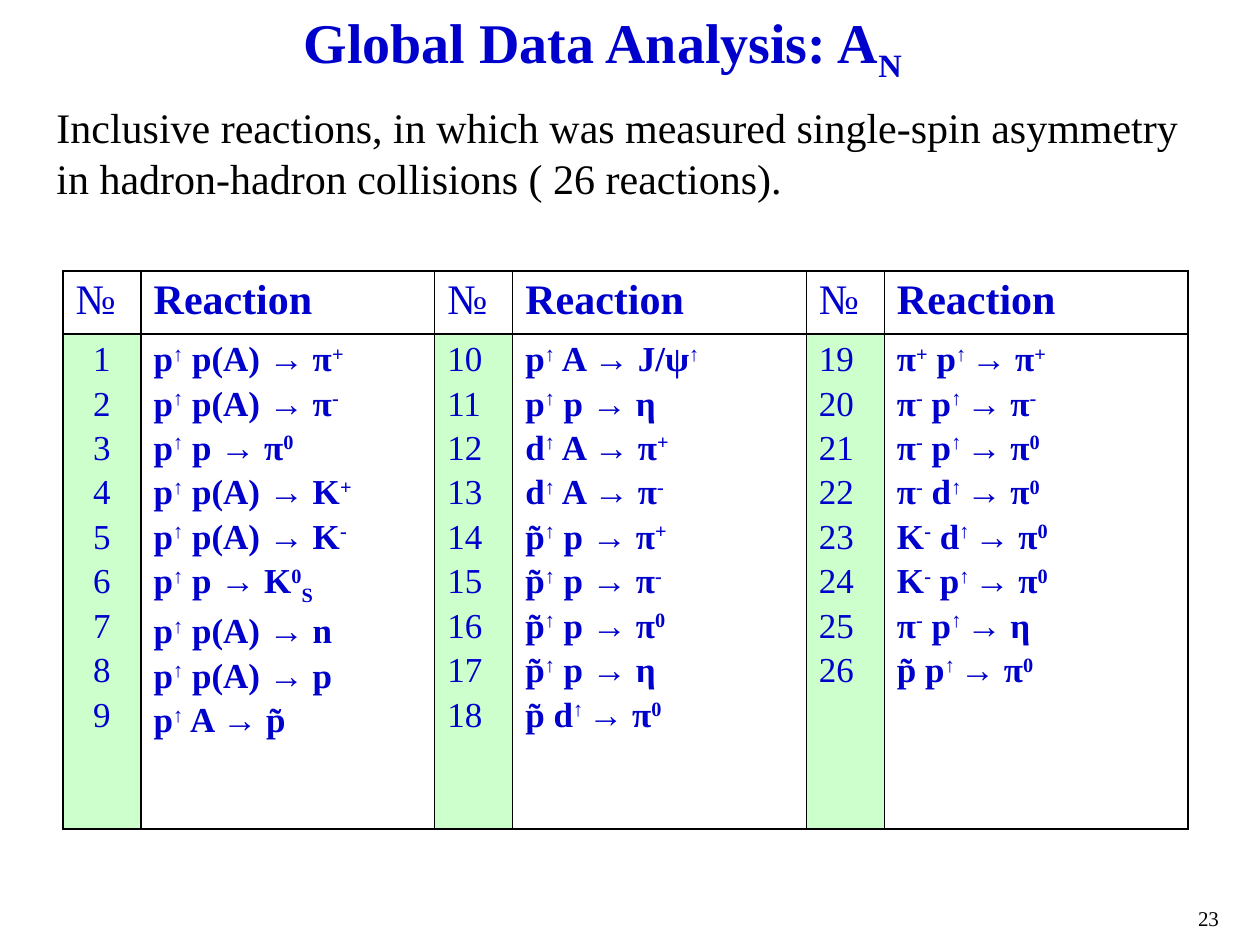
import itertools
from dataclasses import dataclass

import pptx
import pptx.dml.color
import pptx.enum.text
import pptx.oxml
import pptx.oxml.ns
import pptx.util

Pt = pptx.util.Pt
Inches = pptx.util.Inches
RGB = pptx.dml.color.RGBColor.from_string


@dataclass(frozen=True)
class Theme:
    font: str = "Times New Roman"
    blue: str = "0000CC"
    black: str = "000000"
    white: str = "FFFFFF"
    green: str = "CCFFCC"
    title: int = 32
    body: int = 24
    cell: int = 20
    number: int = 12


THEME = Theme()
BASELINES = {"^": "30000", "_": "-25000"}

# In reactions, ^ raises and _ lowers the one character that follows it
REACTIONS = [
    ["p^↑ p(A) → π^+", "p^↑ p(A) → π^-", "p^↑ p → π^0",
     "p^↑ p(A) → K^+", "p^↑ p(A) → K^-", "p^↑ p → K^0_S",
     "p^↑ p(A) → n", "p^↑ p(A) → p", "p^↑ A → p̃"],
    ["p^↑ A → J/ψ^↑", "p^↑ p → η", "d^↑ A → π^+",
     "d^↑ A → π^-", "p̃^↑ p → π^+", "p̃^↑ p → π^-",
     "p̃^↑ p → π^0", "p̃^↑ p → η", "p̃ d^↑^ → π^0"],
    ["π^+ p^↑^ → π^+", "π^- p^↑^ → π^-", "π^- p^↑^ → π^0",
     "π^- d^↑^ → π^0", "K^- d^↑^ → π^0", "K^- p^↑^ → π^0",
     "π^- p^↑^ → η", "p̃ p^↑^ → π^0"],
]


def share(prs, left, top, width, height):
    """Turn percentages of the slide into a position and a size."""
    w, h = prs.slide_width / 100, prs.slide_height / 100
    return int(left * w), int(top * h), int(width * w), int(height * h)


def split_scripts(text):
    """Yield (mark, text) for each stretch of equal baseline."""
    pairs, mark = [], ""
    for char in text:
        if char in BASELINES:
            mark = char
        else:
            pairs.append((mark, char))
            mark = ""
    for mark, group in itertools.groupby(pairs, key=lambda pair: pair[0]):
        yield mark, "".join(char for _, char in group)


def write(tf, lines, size, color, bold=False, space=0):
    """Write one paragraph per line, with raised and lowered runs."""
    for i, line in enumerate(lines):
        p = tf.add_paragraph() if i else tf.paragraphs[0]
        p.alignment = pptx.enum.text.PP_ALIGN.LEFT
        p.space_before = Pt(space)
        for mark, text in split_scripts(line):
            r = p.add_run()
            r.text = text
            r.font.name = THEME.font
            r.font.size = Pt(size)
            r.font.bold = bold
            r.font.color.rgb = RGB(color)
            if mark:
                r.font._element.set("baseline", BASELINES[mark])


def add_title(prs, s, text):
    sp = s.shapes.title
    sp.left, sp.top, sp.width, sp.height = share(prs, 15.3, 0.67, 68.3, 8.93)
    sp.fill.solid()
    sp.fill.fore_color.rgb = RGB(THEME.white)
    tf = sp.text_frame
    tf.auto_size = pptx.enum.text.MSO_AUTO_SIZE.NONE
    tf.vertical_anchor = pptx.enum.text.MSO_ANCHOR.BOTTOM
    tf.margin_left = Inches(0.88)
    write(tf, [text], THEME.title, THEME.blue, bold=True)


def add_text(prs, s, text, place, size):
    tf = s.shapes.add_textbox(*share(prs, *place)).text_frame
    tf.word_wrap = True
    write(tf, [text], size, THEME.black)


def set_borders(cell):
    tc_pr = cell._tc.get_or_add_tcPr()
    ns = pptx.oxml.ns.nsdecls("a")
    for i, side in enumerate(("lnL", "lnR", "lnT", "lnB")):
        tc_pr.insert(i, pptx.oxml.parse_xml(
            f'<a:{side} {ns} w="12700"><a:solidFill>'
            f'<a:srgbClr val="{THEME.black}"/></a:solidFill></a:{side}>'))


def fill_cell(cell, lines, size, bold=False, fill=None):
    if fill:
        cell.fill.solid()
        cell.fill.fore_color.rgb = RGB(fill)
    else:
        cell.fill.background()
    set_borders(cell)
    write(cell.text_frame, lines, size, THEME.blue, bold, space=size * 0.16)


def add_reaction_table(prs, s):
    place = share(prs, 5, 28.67, 89.3, 59.1)
    table = s.shapes.add_table(2, 2 * len(REACTIONS), *place).table
    table.first_row = table.horz_banding = False
    for column, width in zip(table.columns, (0.62, 2.33, 0.62, 2.33, 0.62, 2.41)):
        column.width = Inches(width)
    for row, height in zip(table.rows, (0.5, 3.93)):
        row.height = Inches(height)

    # Each group is a number column followed by a reaction column
    first = 1
    for i, reactions in enumerate(REACTIONS):
        number, reaction = 2 * i, 2 * i + 1
        numbers = [str(n) for n in range(first, first + len(reactions))]
        first += len(reactions)
        fill_cell(table.cell(0, number), ["№"], THEME.body)
        fill_cell(table.cell(0, reaction), ["Reaction"], THEME.body, bold=True)
        fill_cell(table.cell(1, number), numbers, THEME.cell, fill=THEME.green)
        fill_cell(table.cell(1, reaction), reactions, THEME.cell, bold=True)
    # Single digits are set in from the edge
    table.cell(1, 0).margin_left = Inches(0.24)


def main():
    prs = pptx.Presentation()
    prs.slide_width, prs.slide_height = Inches(10), Inches(7.5)
    s = prs.slides.add_slide(prs.slide_layouts[5])

    add_title(prs, s, "Global Data Analysis: A_N")
    add_text(prs, s, "Inclusive reactions, in which was measured single-spin "
             "asymmetry in hadron-hadron collisions ( 26 reactions).",
             (3.5, 10.13, 91.3, 12.13), THEME.body)
    add_reaction_table(prs, s)
    # Slide number
    add_text(prs, s, "23", (94.1, 95.2, 5.9, 4), THEME.number)

    prs.save("out.pptx")


if __name__ == "__main__":
    main()
